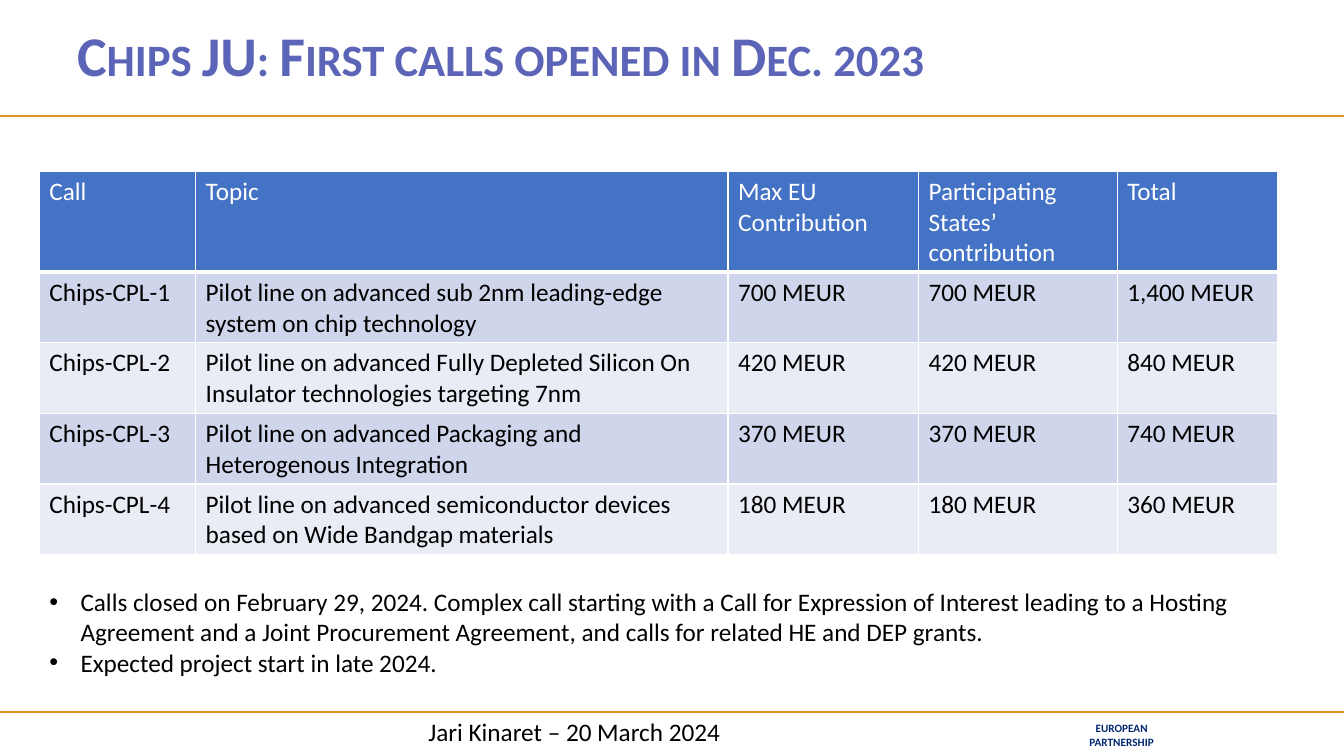
from lxml import etree
from pptx import Presentation, util as u
from pptx.dml.color import RGBColor
from pptx.enum import shapes, text
from pptx.oxml import ns

WIDTH, HEIGHT = u.Inches(13.33), u.Inches(7.5)
WHITE, BLACK, ORANGE = "FFFFFF", "000000", "E09322"
HEADER, BANDS = "4472C4", ("CFD5EA", "E9EBF5")
BODY = {"name": "Calibri", "size": u.Pt(18), "bold": False}
LEFT = 2.93
COLUMNS = (11.63, 39.61, 14.18, 14.78, 11.93)
ROWS = (13.33, 9.33, 9.33, 9.33, 9.33)
CALLS = (
    ("Call", "Topic", "Max EU\nContribution", "Participating States’ contribution", "Total"),
    ("Chips-CPL-1", "Pilot line on advanced sub 2nm leading-edge system on chip technology",
     "700 MEUR", "700 MEUR", "1,400 MEUR"),
    ("Chips-CPL-2", "Pilot line on advanced Fully Depleted Silicon On Insulator technologies targeting 7nm",
     "420 MEUR", "420 MEUR", "840 MEUR"),
    ("Chips-CPL-3", "Pilot line on advanced Packaging and Heterogenous Integration",
     "370 MEUR", "370 MEUR", "740 MEUR"),
    ("Chips-CPL-4", "Pilot line on advanced semiconductor devices based on Wide Bandgap materials",
     "180 MEUR", "180 MEUR", "360 MEUR"),
)
NOTES = (
    "Calls closed on February 29, 2024. Complex call starting with a Call for Expression of Interest "
    "leading to a Hosting Agreement and a Joint Procurement Agreement, and calls for related HE and DEP grants.\n"
    "Expected project start in late 2024."
)


def across(share):
    """Turn a percentage of the slide width into a length."""
    return round(WIDTH * share / 100)


def down(share):
    """Turn a percentage of the slide height into a length."""
    return round(HEIGHT * share / 100)


def color(code):
    """Turn a hex string into a colour."""
    return RGBColor.from_string(code)


def apply(target, values):
    """Set each named attribute on the target."""
    for name, value in values.items():
        setattr(target, name, value)


def write(frame, words, ink, font=BODY):
    """Fill a text frame with one paragraph per line and return the paragraphs."""
    frame.text = words
    for para in frame.paragraphs:
        for span in para.runs:
            apply(span.font, font)
            span.font.color.rgb = color(ink)
    return frame.paragraphs


def add_text(page, area, words, ink, font=BODY, **frame_format):
    """Add a wrapping text box placed by slide shares and return its paragraphs."""
    left, top, width, height = area
    box = page.shapes.add_textbox(across(left), down(top), across(width), down(height))
    apply(box.text_frame, {"word_wrap": True, **frame_format})
    return write(box.text_frame, words, ink, font)


def add_rule(page, top):
    """Draw a line over the full slide width."""
    rule = page.shapes.add_connector(shapes.MSO_CONNECTOR.STRAIGHT, 0, down(top), WIDTH, down(top))
    rule.line.color.rgb = color(ORANGE)
    rule.line.width = u.Pt(1.5)
    etree.SubElement(rule._element.spPr, ns.qn("a:effectLst"))


def add_bullet(para):
    """Give a paragraph a bullet with a hanging indent."""
    props = para._p.get_or_add_pPr()
    props.set("marL", str(u.Inches(0.31)))
    props.set("indent", str(-u.Inches(0.31)))
    etree.SubElement(props, ns.qn("a:buFont"), typeface="Arial")
    etree.SubElement(props, ns.qn("a:buChar"), char="•")


def add_borders(cell, widths):
    """Draw white cell borders with a width in points for each side."""
    props = cell._tc.get_or_add_tcPr()
    for side, points in widths.items():
        line = etree.SubElement(props, ns.qn(f"a:ln{side}"), w=str(u.Pt(points)))
        fill = etree.SubElement(line, ns.qn("a:solidFill"))
        etree.SubElement(fill, ns.qn("a:srgbClr"), val=WHITE)


def add_calls(page):
    """Add the table of calls with a header and banded rows."""
    grid = page.shapes.add_table(
        len(ROWS), len(COLUMNS), across(LEFT), down(22.67), across(sum(COLUMNS)), down(sum(ROWS))
    ).table
    for column, share in zip(grid.columns, COLUMNS):
        column.width = across(share)
    for number, (row, share, values) in enumerate(zip(grid.rows, ROWS, CALLS)):
        row.height = down(share)
        is_header = number == 0
        borders = {"L": 1, "R": 1, "T": 1, "B": 3} if is_header else {"L": 1, "R": 1, "B": 1}
        for cell, words in zip(row.cells, values):
            add_borders(cell, borders)
            cell.fill.solid()
            cell.fill.fore_color.rgb = color(HEADER if is_header else BANDS[(number - 1) % 2])
            write(cell.text_frame, words, WHITE if is_header else BLACK)


def main():
    """Build the slide and save the deck."""
    deck = Presentation()
    apply(deck, {"slide_width": WIDTH, "slide_height": HEIGHT})
    page = deck.slides.add_slide(deck.slide_layouts[6])

    add_rule(page, 94.13)
    partnership = add_text(
        page, (80.12, 95.47, 6.68, 3.47), "EUROPEAN\nPARTNERSHIP", "002673",
        {**BODY, "size": u.Pt(8), "bold": True}, margin_top=0, margin_bottom=0,
    )
    for para in partnership:
        para.alignment = text.PP_ALIGN.CENTER
    add_rule(page, 15.33)

    title = add_text(
        page, (5, 0, 90, 15.33), "Chips JU: First calls opened in Dec. 2023", "5C64B7",
        {**BODY, "size": u.Pt(40), "bold": True}, vertical_anchor=text.MSO_ANCHOR.MIDDLE,
    )[0]
    title.line_spacing = 0.9
    title.runs[0].font._element.set("cap", "small")

    add_text(page, (31.13, 94.13, 35.41, 3.87), "Jari Kinaret – 20 March 2024", BLACK)
    for para in add_text(page, (LEFT, 76.93, 93.32, 13.47), NOTES, BLACK):
        add_bullet(para)
    add_calls(page)
    deck.save("out.pptx")


if __name__ == "__main__":
    main()
